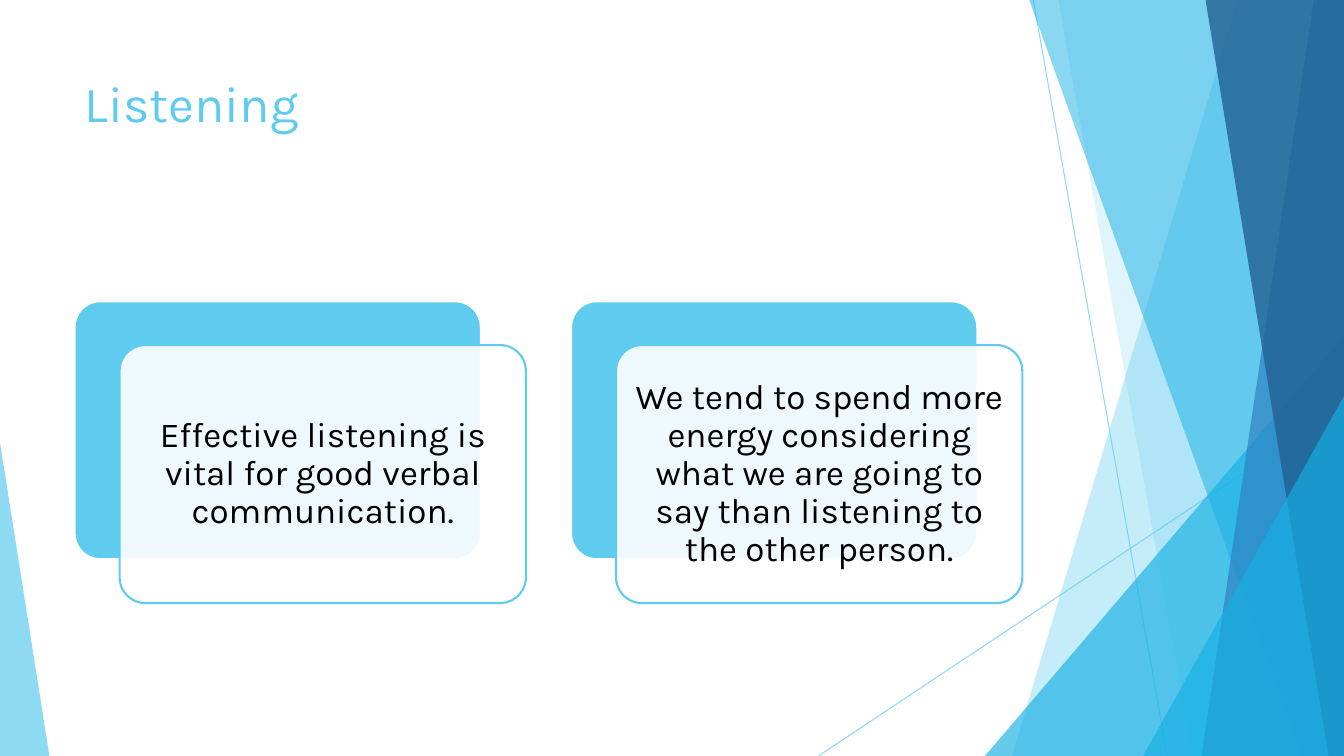
from lxml.etree import SubElement
from pptx import Presentation
from pptx.dml.color import RGBColor
from pptx.enum.shapes import MSO_CONNECTOR, MSO_SHAPE
from pptx.enum.text import MSO_ANCHOR, PP_ALIGN
from pptx.oxml.ns import qn
from pptx.util import Inches, Pt

SLIDE_WIDTH, SLIDE_HEIGHT = Inches(13.333), Inches(7.5)
SKY, AZURE, BLUE, NAVY = "5FCBEF", "17B0E4", "2E83C3", "226292"
WHITE, BLACK = "FFFFFF", "000000"

CARD_LEFT, CARD_TOP, CARD_STEP = 5.55, 39.85, 36.94
CARD_WIDTH, CARD_HEIGHT = 30.23, 34.13
PANEL_SHIFT_X, PANEL_SHIFT_Y = 3.35, 5.8
TEXT_INSET_X, TEXT_INSET_Y = 0.56, 1
MESSAGES = [
    "Effective listening is vital for good verbal communication.",
    "We tend to spend more energy considering what we are going to say "
    "than listening to the other person.",
]

TITLE_FORMAT = {
    "frame": {"word_wrap": True, "vertical_anchor": MSO_ANCHOR.TOP},
    "paragraph": {"alignment": PP_ALIGN.LEFT},
    "font": {"name": "Karla", "size": Pt(36)},
}
MESSAGE_FORMAT = {
    "frame": {
        "word_wrap": True,
        "vertical_anchor": MSO_ANCHOR.MIDDLE,
        "margin_left": Inches(0.1),
        "margin_right": Inches(0.1),
        "margin_top": Inches(0.1),
        "margin_bottom": Inches(0.1),
    },
    "paragraph": {"alignment": PP_ALIGN.CENTER, "line_spacing": 0.9},
    "font": {"name": "Karla", "size": Pt(25)},
}


def across(percent):
    return round(SLIDE_WIDTH * percent / 100)


def down(percent):
    return round(SLIDE_HEIGHT * percent / 100)


def area(left, top, width, height):
    return across(left), down(top), across(width), down(height)


def paint(fill, color, opacity=100):
    fill.solid()
    fill.fore_color.rgb = RGBColor.from_string(color)
    if opacity < 100:
        tint = fill._xPr.find(qn("a:solidFill"))[0]
        SubElement(tint, qn("a:alpha"), val=str(opacity * 1000))


def finish(shape, color, opacity, outline=None):
    shape.shadow.inherit = False
    paint(shape.fill, color, opacity)
    if outline:
        paint(shape.line.fill, outline)
        shape.line.width = Pt(1.5)
    else:
        shape.line.fill.background()


def add_ray(slide, x1, y1, x2, y2):
    ray = slide.shapes.add_connector(
        MSO_CONNECTOR.STRAIGHT, across(x1), down(y1), across(x2), down(y2))
    paint(ray.line.fill, SKY, 70)
    ray.line.width = Pt(0.75)
    SubElement(ray._element.spPr, qn("a:effectLst"))


def add_facet(slide, top_x, bottom_x, color, opacity):
    outline = slide.shapes.build_freeform(across(top_x), 0)
    outline.add_line_segments([
        (SLIDE_WIDTH, 0),
        (SLIDE_WIDTH, SLIDE_HEIGHT),
        (across(bottom_x), SLIDE_HEIGHT),
    ])
    finish(outline.convert_to_shape(), color, opacity)


def add_preset(slide, preset, bounds, adjustment, color, opacity=100, outline=None):
    shape = slide.shapes.add_shape(preset, *area(*bounds))
    shape.adjustments[0] = adjustment
    finish(shape, color, opacity, outline)


def add_corner(slide, left, top, width, apex, color, opacity):
    add_preset(slide, MSO_SHAPE.ISOSCELES_TRIANGLE,
               (left, top, width, 100 - top), apex, color, opacity)


def add_text(slide, bounds, wording, color, formats):
    frame = slide.shapes.add_textbox(*area(*bounds)).text_frame
    paragraph = frame.paragraphs[0]
    run = paragraph.add_run()
    run.text = wording
    run.font.color.rgb = RGBColor.from_string(color)
    parts = {"frame": frame, "paragraph": paragraph, "font": run.font}
    for part, values in formats.items():
        for attribute, value in values.items():
            setattr(parts[part], attribute, value)


def add_card(slide, column, message):
    left = CARD_LEFT + column * CARD_STEP
    panel_left, panel_top = left + PANEL_SHIFT_X, CARD_TOP + PANEL_SHIFT_Y
    size = CARD_WIDTH, CARD_HEIGHT
    add_preset(slide, MSO_SHAPE.ROUNDED_RECTANGLE,
               (left, CARD_TOP, *size), 0.1, SKY, outline=WHITE)
    add_preset(slide, MSO_SHAPE.ROUNDED_RECTANGLE,
               (panel_left, panel_top, *size), 0.1, WHITE, 90, SKY)
    message_bounds = (panel_left + TEXT_INSET_X, panel_top + TEXT_INSET_Y,
                      CARD_WIDTH - 2 * TEXT_INSET_X, CARD_HEIGHT - 2 * TEXT_INSET_Y)
    add_text(slide, message_bounds, message, BLACK, MESSAGE_FORMAT)


def add_backdrop(slide):
    add_ray(slide, 76.88, 0, 86.85, 100)
    add_ray(slide, 100, 53.73, 60.9, 100)
    add_facet(slide, 92.1, 75.3, SKY, 36)
    add_facet(slide, 78.75, 88.75, SKY, 20)
    add_corner(slide, 73.28, 44.4, 26.72, 1, AZURE, 66)
    add_facet(slide, 76.58, 96.83, AZURE, 50)
    add_facet(slide, 97.75, 89.4, BLUE, 70)
    add_facet(slide, 89.7, 98.85, NAVY, 80)
    add_corner(slide, 85.05, 52.4, 14.95, 1, AZURE, 66)
    add_corner(slide, 0, 58.53, 3.68, 0, SKY, 70)


def main():
    presentation = Presentation()
    presentation.slide_width = SLIDE_WIDTH
    presentation.slide_height = SLIDE_HEIGHT
    slide = presentation.slides.add_slide(presentation.slide_layouts[6])
    add_backdrop(slide)
    add_text(slide, (CARD_LEFT, 8.93, 70.5, 19.2), "Listening", SKY, TITLE_FORMAT)
    for column, message in enumerate(MESSAGES):
        add_card(slide, column, message)
    presentation.save("out.pptx")


if __name__ == "__main__":
    main()
